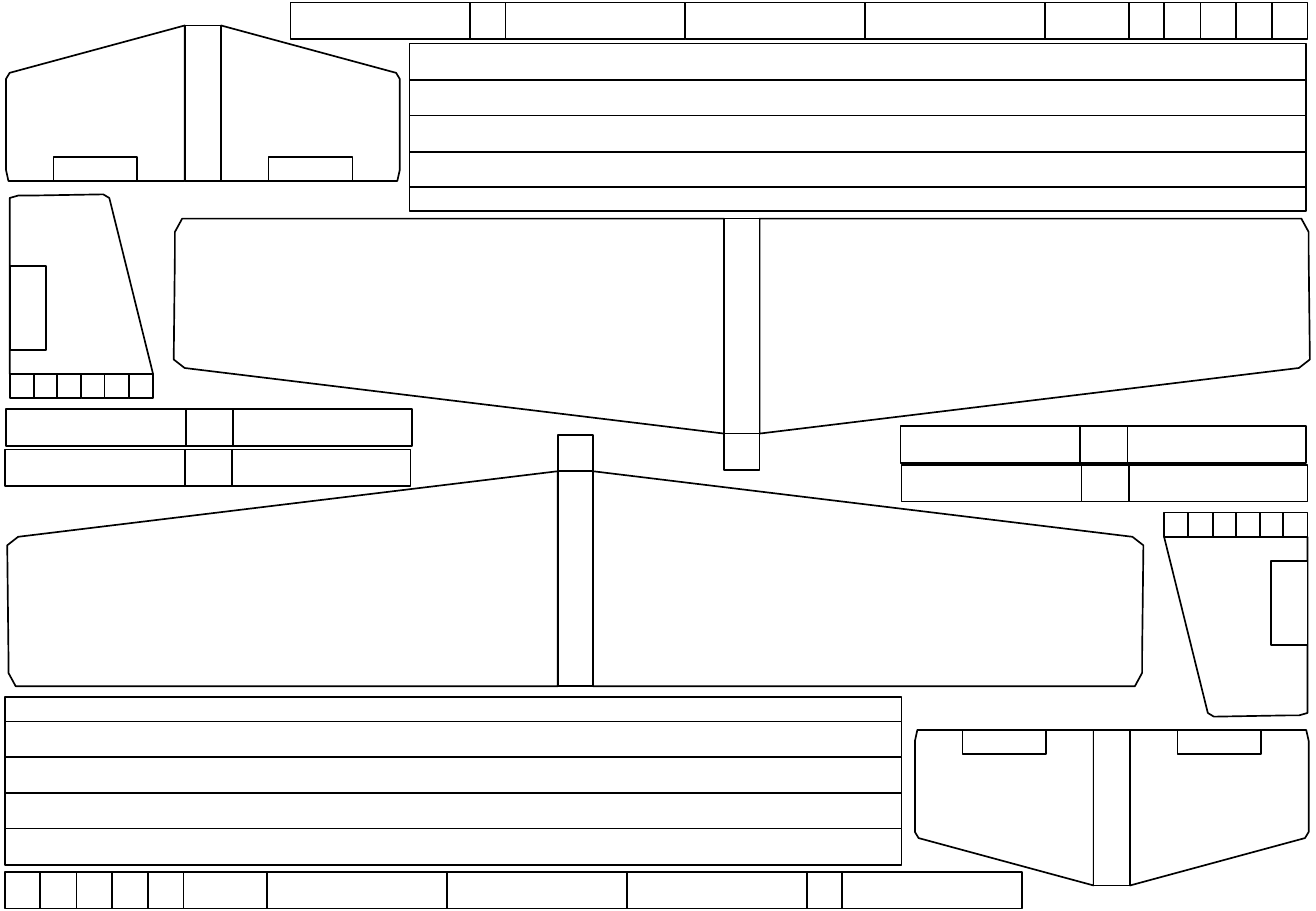
from itertools import pairwise
from pptx import Presentation
from pptx.dml.color import RGBColor
from pptx.enum.shapes import MSO_SHAPE
from pptx.util import Emu, Pt

PX = 9144  # one px is a hundredth of an inch
THEME = {"paper": RGBColor.from_string("FFFFFF"),
         "ink": RGBColor.from_string("000000"),
         "line": Pt(1)}


def row(bounds, top, height):
    """Boxes side by side between the given bounds."""
    return [(left, top, right - left, height) for left, right in pairwise(bounds)]


def finish(shape):
    shape.shadow.inherit = False
    shape.fill.solid()
    shape.fill.fore_color.rgb = THEME["paper"]
    shape.line.color.rgb = THEME["ink"]
    shape.line.width = THEME["line"]


deck = Presentation()
deck.slide_width, deck.slide_height = Emu(1083 * PX), Emu(750 * PX)
page = deck.slides.add_slide(deck.slide_layouts[6])

# Planks of the hull, and half outlines of the wing and the tail
slat_bounds = [0, 20, 49, 79, 108, 138]
wing_half = [(453, 207), (7, 207), (1, 196), (1, 179), (0, 91), (9, 84), (453, 30)]
tail_half = [(147, 128), (2, 128), (0, 119), (0, 107), (0, 44), (3, 39), (147, 0)]
fin_outline = [(0, 148), (0, 3), (7, 1), (18, 1), (77, 0), (82, 3), (118, 148)]

# Each part has its size, outlines, boxes and places (left, top, turned by half)
parts = [
    {"size": (738, 138), "outlines": [],
     "boxes": [(0, top, 738, end - top) for top, end in pairwise(slat_bounds)],
     "places": [(4, 574, False), (337, 36, True)]},
    {"size": (324, 128),
     "outlines": [tail_half, [(324 - x, y) for x, y in tail_half]],
     "boxes": [(147, 0, 30, 128), (39, 108, 69, 20), (216, 108, 69, 20)],
     "places": [(753, 601, True), (5, 21, False)]},
    {"size": (837, 30), "outlines": [],
     "boxes": row([0, 29, 59, 88, 118, 147, 216, 364, 512, 660, 689, 837], 0, 30),
     "places": [(4, 718, False), (239, 2, True)]},
    {"size": (118, 168), "outlines": [fin_outline],
     "boxes": row([0, 20, 39, 59, 78, 98, 118], 148, 20) + [(0, 59, 30, 69)],
     "places": [(958, 422, True), (8, 160, False)]},
    {"size": (935, 207),
     "outlines": [wing_half, [(935 - x, y) for x, y in wing_half]],
     "boxes": [(453, 30, 29, 177), (453, 0, 29, 30)],
     "places": [(6, 358, False), (143, 180, True)]},
    {"size": (334, 30), "outlines": [],
     "boxes": row([0, 148, 187, 334], 0, 30),
     "places": [(5, 337, False), (4, 370, False), (742, 383, False), (741, 351, False)]},
]

# Draw each part as one group at each of its places
for part in parts:
    width, height = part["size"]
    for left, top, turned in part["places"]:
        group = page.shapes.add_group_shape()
        for outline in part["outlines"]:
            points = [(left + width - x, top + height - y) if turned
                      else (left + x, top + y) for x, y in outline]
            builder = group.shapes.build_freeform(*points[0], scale=PX)
            builder.add_line_segments(points[1:], close=True)
            finish(builder.convert_to_shape())
        for x, y, wide, high in part["boxes"]:
            if turned:
                x, y = width - x - wide, height - y - high
            finish(group.shapes.add_shape(
                MSO_SHAPE.RECTANGLE, Emu((left + x) * PX), Emu((top + y) * PX),
                Emu(wide * PX), Emu(high * PX)))

deck.save("out.pptx")
